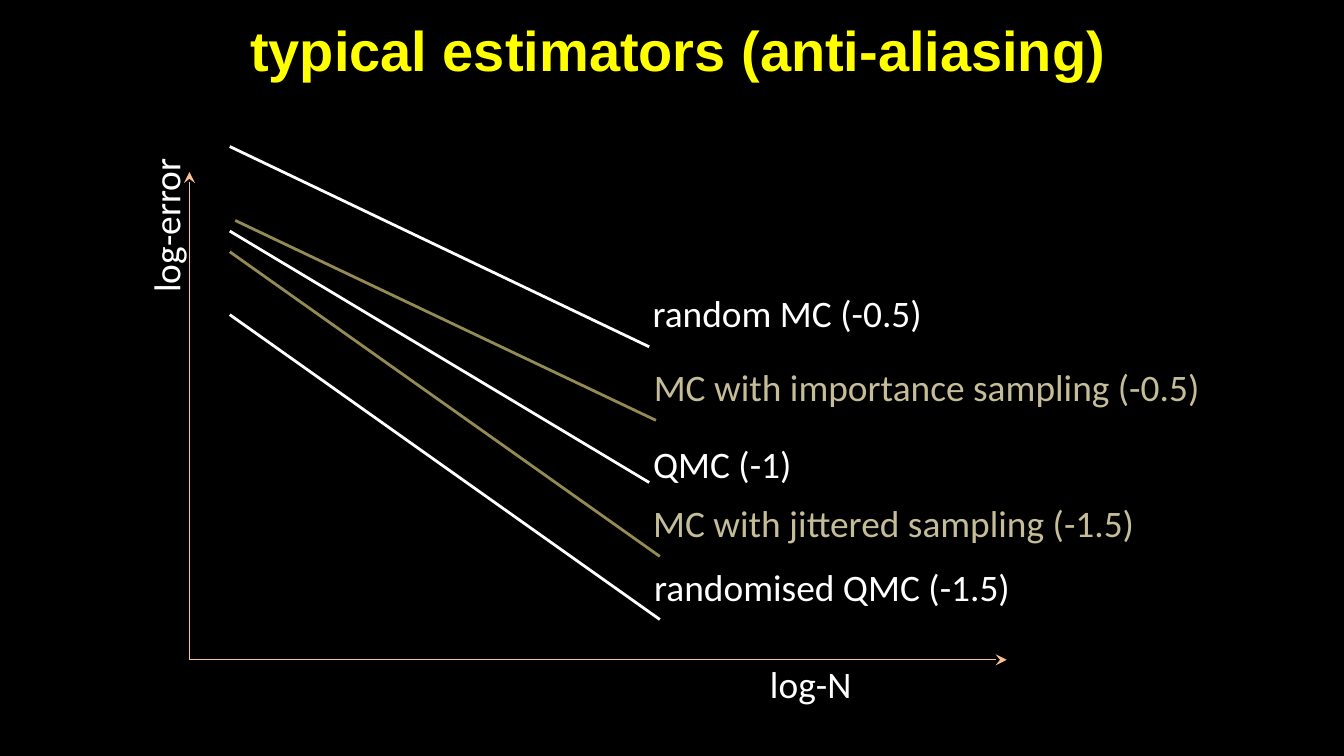
from dataclasses import dataclass

from lxml import etree
from pptx import Presentation
from pptx.dml.color import RGBColor
from pptx.enum import shapes, text
from pptx.oxml import ns
from pptx.util import Pt

COLORS = {
    "background": "000000",
    "title": "FFFF00",
    "axis": "FAC090",
    "white": "FFFFFF",
    "tan_line": "948A54",
    "tan_text": "C4BD97",
}
LABEL_HEIGHT = 31.7
Point = tuple[float, float]


@dataclass
class Label:
    words: str
    left: float
    top: float
    width: float
    color: str = "white"
    rotation: float = 0


@dataclass
class Estimator:
    start: Point
    end: Point
    label: Label
    color: str = "white"


def rgb(name: str) -> RGBColor:
    return RGBColor.from_string(COLORS[name])


def format_font(font, color: str, **values) -> None:
    for attribute, value in values.items():
        setattr(font, attribute, value)
    font.color.rgb = rgb(color)


def draw_line(slide, start: Point, end: Point, color: str, width: float, arrow: bool = False) -> None:
    ends = [Pt(length) for length in (*start, *end)]
    line = slide.shapes.add_connector(shapes.MSO_CONNECTOR.STRAIGHT, *ends)
    line.line.color.rgb = rgb(color)
    line.line.width = Pt(width)
    if arrow:
        etree.SubElement(line.line._get_or_add_ln(), ns.qn("a:tailEnd"), type="stealth")
    etree.SubElement(line._element.spPr, ns.qn("a:effectLst"))


def draw_label(slide, label: Label) -> None:
    frame = (label.left, label.top, label.width, LABEL_HEIGHT)
    box = slide.shapes.add_textbox(*[Pt(length) for length in frame])
    box.rotation = label.rotation
    box.text_frame.word_wrap = False
    box.text_frame.auto_size = text.MSO_AUTO_SIZE.SHAPE_TO_FIT_TEXT
    run = box.text_frame.paragraphs[0].add_run()
    run.text = label.words
    format_font(run.font, label.color, name="Calibri", size=Pt(20))


ORIGIN = (101.5, 353.5)
AXIS_TIPS = [(101.5, 92.2), (539.3, 353.5)]
AXIS_LABELS = [
    Label("log-error", 45.4, 104.4, 87.1, rotation=270),
    Label("log-N", 405.4, 350.6, 58.3),
]
ESTIMATORS = [
    Estimator((123.1, 78.5), (347.8, 185.8), Label("random MC (-0.5)", 342.5, 152.1, 159.8)),
    Estimator((126, 118.1), (351.4, 225.2),
              Label("MC with importance sampling (-0.5)", 343.2, 191.5, 309.6, "tan_text"), "tan_line"),
    Estimator((123.1, 123.8), (347.8, 258.5), Label("QMC (-1)", 342.8, 232.9, 89.3)),
    Estimator((123.1, 134.9), (353.5, 298.1),
              Label("MC with jittered sampling (-1.5)", 342.8, 264.4, 275, "tan_text"), "tan_line"),
    Estimator((123.1, 168.6), (353.5, 331.9), Label("randomised QMC (-1.5)", 343.4, 298.8, 206.6)),
]


def main() -> None:
    deck = Presentation()
    deck.slide_width, deck.slide_height = Pt(720), Pt(405)
    slide = deck.slides.add_slide(deck.slide_layouts[5])
    slide.background.fill.solid()
    slide.background.fill.fore_color.rgb = rgb("background")

    # Title
    title = slide.shapes.title
    placement = {"left": 50.4, "top": 5.8, "width": 625.7, "height": 41}
    for attribute, length in placement.items():
        setattr(title, attribute, Pt(length))
    heading = title.text_frame
    heading.text = "typical estimators (anti-aliasing)"
    margins = {"margin_left": 6.5, "margin_right": 6.5, "margin_top": 2.9, "margin_bottom": 2.9}
    for attribute, length in margins.items():
        setattr(heading, attribute, Pt(length))
    heading.vertical_anchor = text.MSO_ANCHOR.MIDDLE
    heading.auto_size = text.MSO_AUTO_SIZE.NONE
    heading.paragraphs[0].alignment = text.PP_ALIGN.CENTER
    format_font(heading.paragraphs[0].runs[0].font, "title", name="Arial", size=Pt(30), bold=True)

    # Axes
    for tip in AXIS_TIPS:
        draw_line(slide, ORIGIN, tip, "axis", 0.75, arrow=True)
    for label in AXIS_LABELS:
        draw_label(slide, label)

    # Convergence lines with their slopes
    for estimator in ESTIMATORS:
        draw_line(slide, estimator.start, estimator.end, estimator.color, 1.5)
        draw_label(slide, estimator.label)

    deck.save("out.pptx")


if __name__ == "__main__":
    main()
